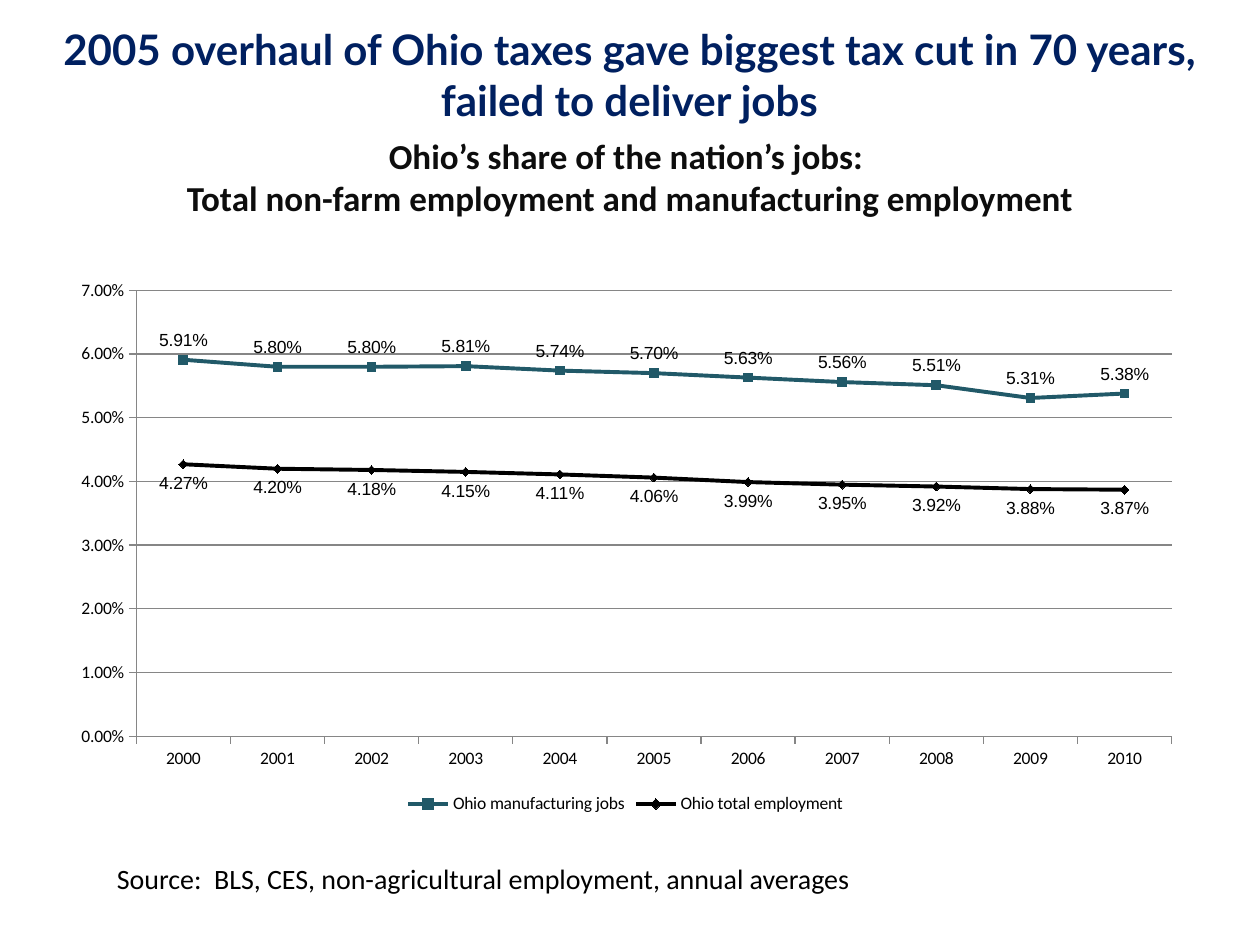
from lxml.etree import SubElement
from pptx import Presentation
from pptx.chart.data import CategoryChartData
from pptx.dml.color import RGBColor
from pptx.enum.chart import (XL_CHART_TYPE, XL_LABEL_POSITION, XL_LEGEND_POSITION,
                             XL_MARKER_STYLE, XL_TICK_MARK)
from pptx.enum.text import MSO_ANCHOR, MSO_AUTO_SIZE, PP_ALIGN
from pptx.oxml.ns import qn
from pptx.util import Inches, Pt

NAVY = RGBColor(0x00, 0x20, 0x60)
TEAL = RGBColor(0x21, 0x59, 0x68)
BLACK = RGBColor(0x00, 0x00, 0x00)
NEAR_BLACK = RGBColor(0x0D, 0x0D, 0x0D)
GRAY = RGBColor(0x86, 0x86, 0x86)
WHITE = RGBColor(0xFF, 0xFF, 0xFF)


def style_font(font, name, size, color, bold=False):
    font.name = name
    font.size = Pt(size)
    font.color.rgb = color
    font.bold = bold


def add_line(paragraph, text, align, *font_style):
    """Put one styled run into the paragraph."""
    paragraph.alignment = align
    run = paragraph.add_run()
    run.text = text
    style_font(run.font, *font_style)


prs = Presentation()
prs.slide_width = Inches(10)
prs.slide_height = Inches(7.5)
slide = prs.slides.add_slide(prs.slide_layouts[5])

# Headline
headline = slide.shapes.title
headline.left, headline.top = Inches(0.33), Inches(0)
headline.width, headline.height = Inches(9.33), Inches(0.99)
headline.fill.solid()
headline.fill.fore_color.rgb = WHITE
frame = headline.text_frame
frame.auto_size = MSO_AUTO_SIZE.NONE
frame.word_wrap = True
frame.vertical_anchor = MSO_ANCHOR.BOTTOM
frame.margin_left = frame.margin_right = frame.margin_bottom = 0
frame.margin_top = Inches(0.05)
add_line(frame.paragraphs[0],
         "2005 overhaul of Ohio taxes gave biggest tax cut in 70 years, failed to deliver jobs",
         PP_ALIGN.CENTER, "Lato", 24, NAVY, True)

# Chart heading
heading = slide.shapes.add_textbox(Inches(0.5), Inches(1.02), Inches(9), Inches(0.77)).text_frame
heading.word_wrap = True
add_line(heading.paragraphs[0], "Ohio’s share of the nation’s jobs: ",
         PP_ALIGN.CENTER, "Calibri", 20, NEAR_BLACK, True)
add_line(heading.add_paragraph(), "Total non-farm employment and manufacturing employment",
         PP_ALIGN.CENTER, "Calibri", 20, NEAR_BLACK, True)

# Source line
source = slide.shapes.add_textbox(Inches(0.83), Inches(6.79), Inches(8.67), Inches(0.37)).text_frame
source.word_wrap = True
add_line(source.paragraphs[0], "Source:  BLS, CES, non-agricultural employment, annual averages",
         PP_ALIGN.LEFT, "Calibri", 16, BLACK)

# Job shares by year
shares = CategoryChartData(number_format="0.00%")
shares.categories = [str(year) for year in range(2000, 2011)]
shares.add_series("Ohio manufacturing jobs", [
    0.0591, 0.0580, 0.0580, 0.0581, 0.0574, 0.0570, 0.0563, 0.0556, 0.0551, 0.0531, 0.0538])
shares.add_series("Ohio total employment", [
    0.0427, 0.0420, 0.0418, 0.0415, 0.0411, 0.0406, 0.0399, 0.0395, 0.0392, 0.0388, 0.0387])
chart = slide.shapes.add_chart(XL_CHART_TYPE.LINE_MARKERS, Inches(0.45), Inches(2.13),
                               Inches(9.03), Inches(4.37), shares).chart
style_font(chart.font, "Calibri", 10, BLACK)
chart.has_title = False
chart.has_legend = True
chart.legend.position = XL_LEGEND_POSITION.BOTTOM
chart.legend.include_in_layout = False

for axis in (chart.category_axis, chart.value_axis):
    axis.major_tick_mark = XL_TICK_MARK.OUTSIDE
    axis.minor_tick_mark = XL_TICK_MARK.NONE
    axis.format.line.color.rgb = GRAY
    axis.format.line.width = Pt(0.75)

share_axis = chart.value_axis
share_axis.minimum_scale, share_axis.maximum_scale, share_axis.major_unit = 0, 0.07, 0.01
share_axis.tick_labels.number_format = "0.00%"
share_axis.tick_labels.number_format_is_linked = False
share_axis.has_major_gridlines = True
share_axis.major_gridlines.format.line.color.rgb = GRAY
share_axis.major_gridlines.format.line.width = Pt(0.75)

plot = chart.plots[0]
plot.vary_by_categories = False
series_styles = [
    (TEAL, XL_MARKER_STYLE.SQUARE, XL_LABEL_POSITION.ABOVE),
    (BLACK, XL_MARKER_STYLE.DIAMOND, XL_LABEL_POSITION.BELOW),
]
for series, (color, marker_style, label_position) in zip(plot.series, series_styles):
    series.smooth = False
    series.format.line.color.rgb = color
    series.format.line.width = Pt(2.25)
    series.marker.style = marker_style
    series.marker.size = 5
    series.marker.format.fill.solid()
    series.marker.format.fill.fore_color.rgb = color
    series.marker.format.line.color.rgb = color
    labels = series.data_labels
    labels.show_value = True
    labels.position = label_position
    labels.number_format = "0.00%"
    labels.number_format_is_linked = False
    style_font(labels.font, "Arial", 10, BLACK)

# Fixed inner plot area, as fractions of the chart
plot_area = plot._element.getparent()
layout = plot_area.find(qn("c:layout"))
if layout is None:
    layout = SubElement(plot_area, qn("c:layout"))
    plot_area.insert(0, layout)
manual = SubElement(layout, qn("c:manualLayout"))
for tag, value in [("layoutTarget", "inner"), ("xMode", "edge"), ("yMode", "edge"),
                   ("x", "0.07"), ("y", "0.04"), ("w", "0.91"), ("h", "0.81")]:
    SubElement(manual, qn(f"c:{tag}")).set("val", value)

prs.save("out.pptx")
